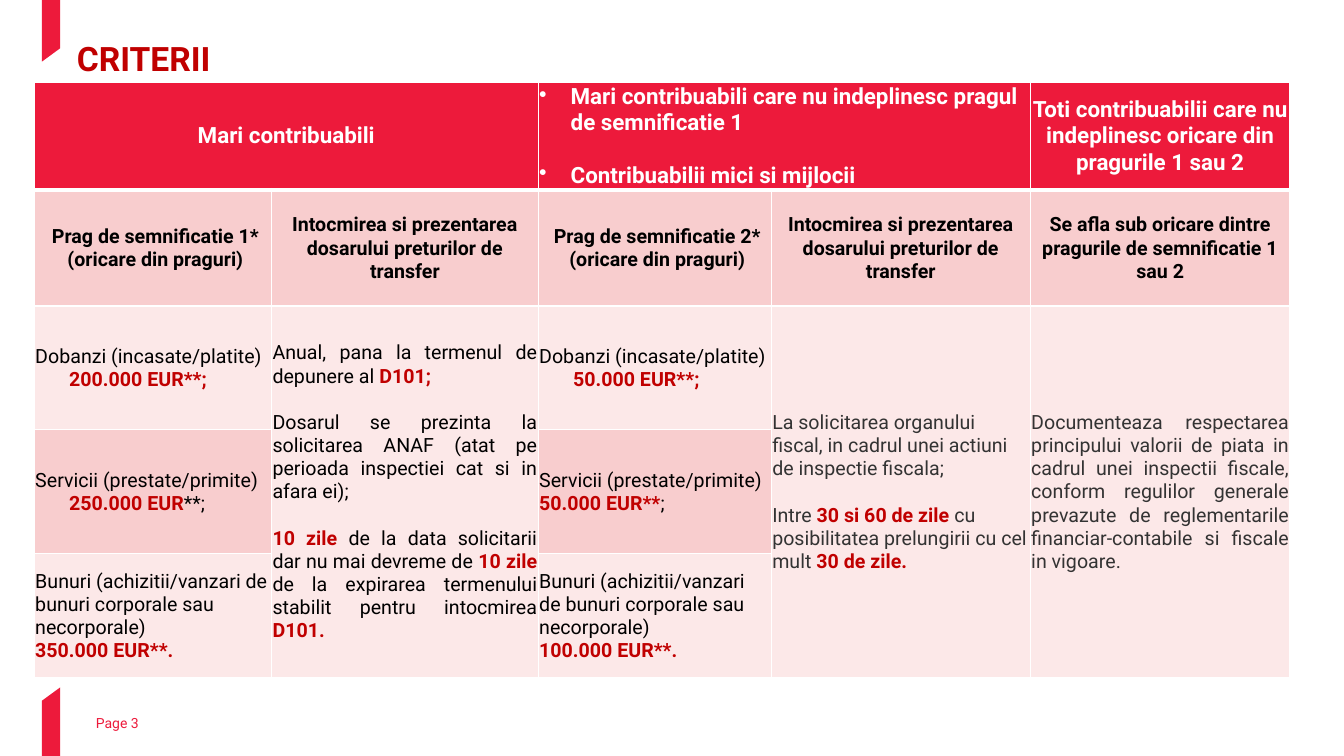
import dataclasses

import lxml.etree
import pptx
import pptx.dml.color
import pptx.enum.text
import pptx.oxml.ns
import pptx.util

Pt = pptx.util.Pt
ALIGN = pptx.enum.text.PP_ALIGN
ANCHOR = pptx.enum.text.MSO_ANCHOR
qn = pptx.oxml.ns.qn


@dataclasses.dataclass(frozen=True)
class Theme:
    font: str = "Roboto"
    brand: str = "ED1A3B"
    accent: str = "C00000"
    black: str = "000000"
    grey: str = "333333"
    white: str = "FFFFFF"
    band_dark: str = "F8CDCE"
    band_light: str = "FCE8E8"
    title_size: float = 24
    header_size: float = 16
    body_size: float = 14
    footer_size: float = 10
    body_gap: float = 16.5
    header_gap: float = 18.75


THEME = Theme()
COLUMN_WIDTHS = (169.5, 190.5, 166.5, 185, 185.5)
ROW_HEIGHTS = (75, 83, 88.5, 88.5, 88.5)

DOSSIER = "Intocmirea si prezentarea dosarului preturilor de transfer"
GOODS = "Bunuri (achizitii/vanzari de bunuri corporale sau necorporale)"
INTEREST = "Dobanzi (incasate/platite)"
SERVICES = "Servicii (prestate/primite)"
INDENTED = {"left": 24.25}
GAP = {"before": THEME.body_gap}

# (row, column): paragraphs, each a text and its format; accents stand between bars
HEADERS = {
    (0, 0): [("Mari contribuabili", {"align": ALIGN.CENTER})],
    (0, 2): [
        ("Mari contribuabili care nu indeplinesc pragul de semnificatie 1",
         {"bullet": "•", "left": 22.5}),
        ("Contribuabilii mici si mijlocii",
         {"bullet": "•", "left": 22.5, "before": THEME.header_gap}),
    ],
    (0, 4): [("Toti contribuabilii care nu indeplinesc oricare din pragurile 1 sau 2",
              {"align": ALIGN.CENTER})],
}
SUBHEADERS = (
    "Prag de semnificatie 1* (oricare din praguri)",
    DOSSIER,
    "Prag de semnificatie 2* (oricare din praguri)",
    DOSSIER,
    "Se afla sub oricare dintre pragurile de semnificatie 1 sau 2",
)
THRESHOLDS = {
    (2, 0): [(INTEREST, {}), ("|200.000 EUR**;|", INDENTED)],
    (3, 0): [(SERVICES, {}), ("|250.000 EUR|**;", INDENTED)],
    (4, 0): [(GOODS, {}), ("|350.000 EUR**.|", {})],
    (2, 2): [(INTEREST, {}), ("|50.000 EUR**;|", INDENTED)],
    (3, 2): [(SERVICES, {}), ("|50.000 EUR**|;", {})],
    (4, 2): [(GOODS, {}), ("|100.000 EUR**.|", {})],
}
LARGE_RULES = [
    ("Anual, pana la termenul de depunere al |D101;|", {}),
    ("Dosarul se prezinta la solicitarea ANAF (atat pe perioada inspectiei "
     "cat si in afara ei);", GAP),
    ("|10 zile |de la data solicitarii dar nu mai devreme de |10 zile |"
     "de la expirarea termenului stabilit pentru intocmirea |D101.|", GAP),
]
SMALL_RULES = [
    ("La solicitarea organului fiscal, in cadrul unei actiuni de inspectie fiscala;", {}),
    ("Intre |30 si 60 de zile |cu posibilitatea prelungirii cu cel mult |30 de zile.|", GAP),
]
OTHER_RULES = [
    ("Documenteaza respectarea principului valorii de piata in cadrul unei inspectii "
     "fiscale, conform regulilor generale prevazute de reglementarile "
     "financiar-contabile si fiscale in vigoare.", {}),
]


def rgb(value):
    return pptx.dml.color.RGBColor.from_string(value)


def write_para(frame, text, *, size=THEME.body_size, color=THEME.black, bold=False,
               align=ALIGN.LEFT, before=0, left=0, bullet=None, spacing=None):
    """Fill the empty first paragraph or add one; text between bars is accented."""
    para = frame.paragraphs[0]
    if para.runs:
        para = frame.add_paragraph()
    properties = para._p.get_or_add_pPr()
    if left:
        properties.set("marL", str(Pt(left)))
    if bullet:
        properties.set("indent", str(-Pt(left)))
        lxml.etree.SubElement(properties, qn("a:buChar"), char=bullet)
    para.alignment = align
    para.space_before = Pt(before)
    if spacing:
        para.line_spacing = spacing
    for index, part in enumerate(text.split("|")):
        if not part:
            continue
        accented = index % 2 == 1
        span = para.add_run()
        span.text = part
        span.font.name = THEME.font
        span.font.size = Pt(size)
        span.font.bold = bold or accented
        span.font.color.rgb = rgb(THEME.accent if accented else color)


def add_text(page, box, text, **style):
    frame = page.shapes.add_textbox(*map(Pt, box)).text_frame
    frame.word_wrap = True
    frame.margin_left = frame.margin_right = frame.margin_top = frame.margin_bottom = 0
    write_para(frame, text, **style)


def add_ribbon(page, box, slant, at_top):
    """Draw a vertical band whose end towards the slide centre is slanted."""
    left, top, width, height = box
    right, bottom = left + width, top + height
    if at_top:
        points = [(right, bottom - slant), (right, top), (left, top), (left, bottom)]
    else:
        points = [(left, top + slant), (left, bottom), (right, bottom), (right, top)]
    points = [(Pt(x), Pt(y)) for x, y in points]
    builder = page.shapes.build_freeform(*points[0], scale=1.0)
    builder.add_line_segments(points[1:], close=True)
    ribbon = builder.convert_to_shape()
    ribbon.shadow.inherit = False
    ribbon.fill.solid()
    ribbon.fill.fore_color.rgb = rgb(THEME.brand)
    ribbon.line.fill.background()


def style_cell(cell, row, column):
    properties = cell._tc.get_or_add_tcPr()
    for side in "LRTB":
        thick = (row, side) in ((0, "B"), (1, "T"))
        border = lxml.etree.SubElement(properties, qn(f"a:ln{side}"),
                                       w=str(Pt(3 if thick else 1)))
        fill = lxml.etree.SubElement(border, qn("a:solidFill"))
        lxml.etree.SubElement(fill, qn("a:srgbClr"), val=THEME.white)
    cell.fill.solid()
    band = THEME.band_dark if row % 2 else THEME.band_light
    cell.fill.fore_color.rgb = rgb(band if row else THEME.brand)
    cell.vertical_anchor = ANCHOR.MIDDLE
    cell.margin_left = Pt(4.3 if row == 1 and column in (0, 2) else 0.7)
    cell.margin_right = cell.margin_top = Pt(0.7)
    cell.margin_bottom = 0


def add_criteria_table(page, left, top):
    box = (left, top, sum(COLUMN_WIDTHS), sum(ROW_HEIGHTS))
    table = page.shapes.add_table(len(ROW_HEIGHTS), len(COLUMN_WIDTHS),
                                  *map(Pt, box)).table
    table.horz_banding = False
    for column, width in zip(table.columns, COLUMN_WIDTHS):
        column.width = Pt(width)
    for row, height in zip(table.rows, ROW_HEIGHTS):
        row.height = Pt(height)
    for row in range(len(ROW_HEIGHTS)):
        for column in range(len(COLUMN_WIDTHS)):
            style_cell(table.cell(row, column), row, column)
    for column in (0, 2):
        table.cell(0, column).merge(table.cell(0, column + 1))
    for column in (1, 3, 4):
        table.cell(2, column).merge(table.cell(4, column))

    def fill_cell(place, paragraphs, **style):
        for text, details in paragraphs:
            write_para(table.cell(*place).text_frame, text, **{**style, **details})

    for place, paragraphs in HEADERS.items():
        fill_cell(place, paragraphs, size=THEME.header_size, color=THEME.white, bold=True)
    for column, text in enumerate(SUBHEADERS):
        fill_cell((1, column), [(text, {})], bold=True, align=ALIGN.CENTER)
    for place, paragraphs in THRESHOLDS.items():
        fill_cell(place, paragraphs)
    fill_cell((2, 1), LARGE_RULES, align=ALIGN.JUSTIFY)
    fill_cell((2, 3), SMALL_RULES, color=THEME.grey)
    fill_cell((2, 4), OTHER_RULES, color=THEME.grey, align=ALIGN.JUSTIFY)


def main():
    deck = pptx.Presentation()
    deck.slide_width, deck.slide_height = Pt(960), Pt(540)
    page = deck.slides.add_slide(deck.slide_layouts[6])
    add_ribbon(page, (30, 0, 13, 44), 9.5, at_top=True)
    add_ribbon(page, (30, 491, 13, 49), 9.5, at_top=False)
    add_text(page, (55, 26, 905, 39), "CRITERII", size=THEME.title_size,
             color=THEME.accent, bold=True, spacing=1.05)
    add_text(page, (68.5, 510.5, 224, 13), "Page 3", size=THEME.footer_size,
             color=THEME.brand)
    add_criteria_table(page, 24.5, 58.5)
    deck.save("out.pptx")


if __name__ == "__main__":
    main()
